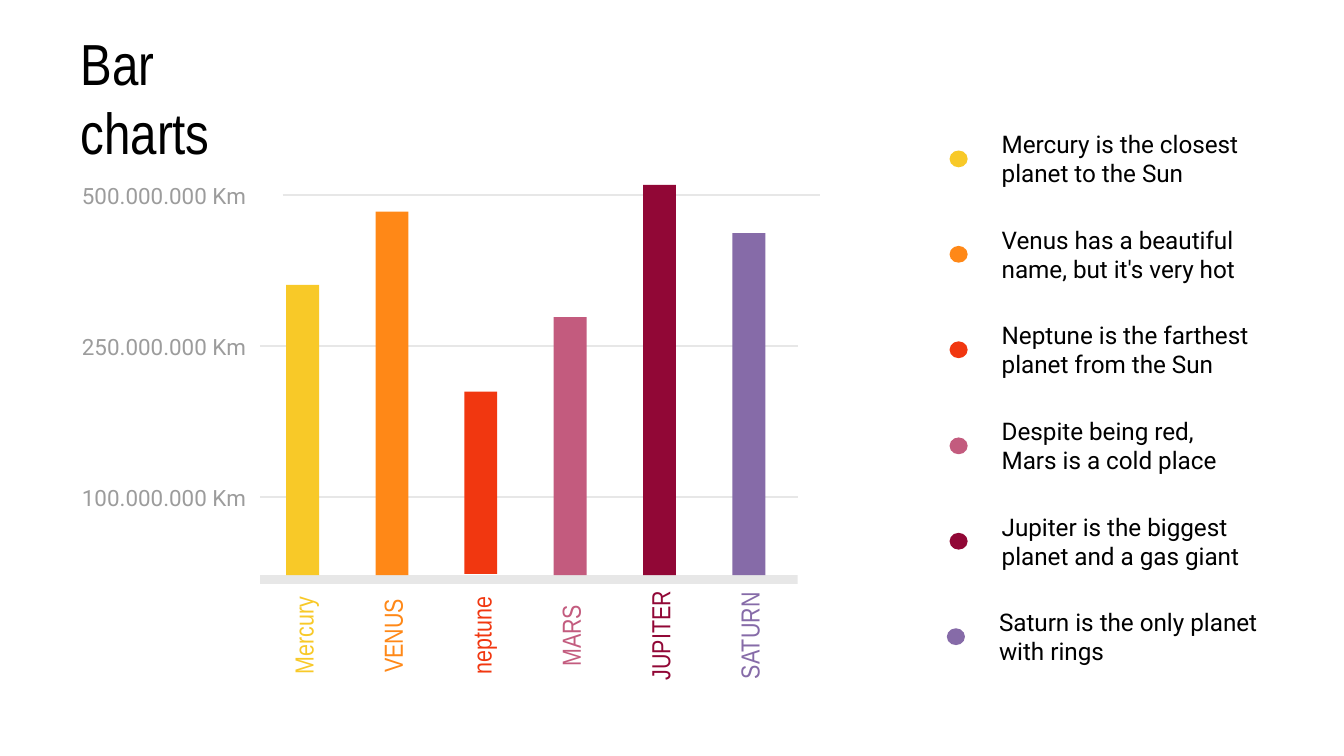
from dataclasses import dataclass

from lxml import etree
from pptx import Presentation
from pptx.dml.color import RGBColor
from pptx.enum.shapes import MSO_CONNECTOR, MSO_SHAPE
from pptx.enum.text import MSO_ANCHOR, MSO_AUTO_SIZE, PP_ALIGN
from pptx.oxml.ns import qn
from pptx.util import Emu, Pt

RECT, OVAL = MSO_SHAPE.RECTANGLE, MSO_SHAPE.OVAL
LEFT, MID, RIGHT = PP_ALIGN.LEFT, PP_ALIGN.CENTER, PP_ALIGN.RIGHT
STRAIGHT = MSO_CONNECTOR.STRAIGHT

BLACK = RGBColor(0x00, 0x00, 0x00)
GRAY = RGBColor(0x9C, 0x9C, 0x9C)
PALE = RGBColor(0xE7, 0xE7, 0xE7)
YELLOW = RGBColor(0xF8, 0xC9, 0x28)
ORANGE = RGBColor(0xFF, 0x88, 0x17)
RED = RGBColor(0xF1, 0x37, 0x10)
PINK = RGBColor(0xC3, 0x5B, 0x7E)
WINE = RGBColor(0x91, 0x07, 0x36)
PURPLE = RGBColor(0x86, 0x6B, 0xA8)

HEAD, BODY = "Arial Narrow", "Roboto"
SCALE = 4572  # EMU per px, 200 px to the inch
BASE = 856  # foot of the bars
BAR_GAP, ROW_GAP = 132.7, 142.2


@dataclass
class Planet:
    name: str
    fact: str
    color: RGBColor
    top: int
    base: int = BASE
    shift: int = 0


@dataclass
class Grid:
    label: str
    x: int
    y: int


PLANETS = [
    Planet("Mercury", "Mercury is the closest planet to the Sun", YELLOW, 424),
    Planet("VENUS", "Venus has a beautiful name, but it's very hot", ORANGE, 315),
    Planet("neptune", "Neptune is the farthest planet from the Sun", RED, 583, base=854),
    Planet("MARS", "Despite being red,\nMars is a cold place", PINK, 472),
    Planet("JUPITER", "Jupiter is the biggest planet and a gas giant", WINE, 275),
    Planet("SATURN", "Saturn is the only planet with rings", PURPLE, 347, shift=-4),
]
GRIDS = [
    Grid("100.000.000 Km", 387, 740),
    Grid("250.000.000 Km", 387, 515),
    Grid("500.000.000 Km", 421, 290),
]


def px(n: int) -> Emu:
    return Emu(n * SCALE)


def write(shape, text: str, font: str, size: int, color: RGBColor, align=LEFT) -> None:
    frame = shape.text_frame
    frame.word_wrap = True
    frame.auto_size = MSO_AUTO_SIZE.NONE
    frame.vertical_anchor = MSO_ANCHOR.MIDDLE
    frame.margin_left = frame.margin_right = px(20)
    frame.margin_top = frame.margin_bottom = px(20)
    para = frame.paragraphs[0]
    para.text = text
    para.alignment = align
    para.font.name = font
    para.font.size = Pt(size)
    para.font.color.rgb = color


def add_text(slide, x: int, y: int, w: int, h: int, text: str, font: str,
             size: int, color: RGBColor, align=LEFT, turn: int = 0) -> None:
    box = slide.shapes.add_textbox(px(x), px(y), px(w), px(h))
    box.rotation = turn
    write(box, text, font, size, color, align)


def add_block(slide, kind, x: int, y: int, w: int, h: int, color: RGBColor) -> None:
    block = slide.shapes.add_shape(kind, px(x), px(y), px(w), px(h))
    block.shadow.inherit = False
    block.fill.solid()
    block.fill.fore_color.rgb = color
    block.line.fill.background()


def add_grid(slide, grid: Grid) -> None:
    rule = slide.shapes.add_connector(
        STRAIGHT, px(grid.x), px(grid.y), px(grid.x + 800), px(grid.y))
    rule.line.color.rgb = PALE
    rule.line.width = Pt(0.85)
    etree.SubElement(rule._element.spPr, qn("a:effectLst"))
    add_text(slide, 100, grid.y - 54, 286, 109, grid.label, BODY, 12, GRAY, RIGHT)


def add_bar(slide, i: int, planet: Planet) -> None:
    x = round(426 + i * BAR_GAP)
    add_block(slide, RECT, x, planet.top, 49, planet.base - planet.top, planet.color)
    add_text(slide, x - 65, 907, 180, 78, planet.name, HEAD, 14, planet.color, MID, 270)


def add_fact(slide, i: int, planet: Planet) -> None:
    y = round(175 + i * ROW_GAP)
    add_text(slide, 1471 + planet.shift, y, 428, 122, planet.fact, BODY, 13, BLACK)
    add_block(slide, OVAL, 1413 + planet.shift, y + 49, 27, 25, planet.color)


def main() -> None:
    deck = Presentation()
    deck.slide_width, deck.slide_height = px(2000), px(1125)
    slide = deck.slides.add_slide(deck.slide_layouts[5])

    # Title
    title = slide.shapes.title
    title.left, title.top, title.width, title.height = px(100), px(91), px(359), px(106)
    write(title, "Bar charts", HEAD, 31, BLACK)

    # Base line and scale
    add_block(slide, RECT, 387, BASE, 800, 13, PALE)
    for grid in GRIDS:
        add_grid(slide, grid)

    # Bars with names, and the legend
    for i, planet in enumerate(PLANETS):
        add_bar(slide, i, planet)
        add_fact(slide, i, planet)

    deck.save("out.pptx")


if __name__ == "__main__":
    main()
